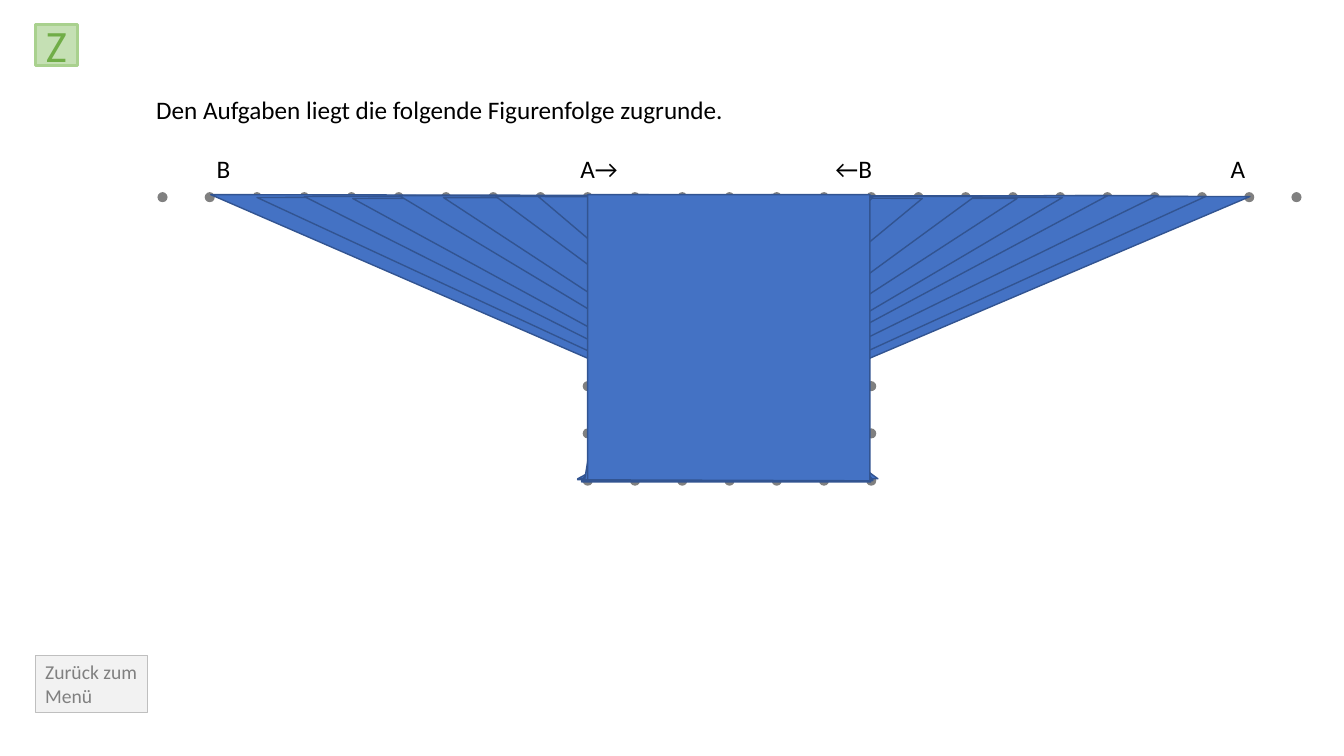
from dataclasses import dataclass
from pptx import Presentation
from pptx.dml.color import RGBColor
from pptx.enum.shapes import MSO_SHAPE
from pptx.enum.text import MSO_ANCHOR, PP_ALIGN
from pptx.util import Pt


@dataclass(frozen=True)
class Theme:
    font: str = "Calibri"
    text: str = "000000"
    dot: str = "808080"
    fill: str = "4472C4"
    edge: str = "325491"
    badge: str = "C5E0B4"
    rim: str = "A9D18E"
    letter: str = "70AD47"
    button: str = "F2F2F2"
    frame: str = "BFBFBF"
    muted: str = "808080"
    large: int = 32
    body: int = 18
    small: int = 14


THEME = Theme()
SIZE = (960, 540)
TITLE = ("Den Aufgaben liegt die folgende Figurenfolge zugrunde.", (104.4, 63.4, 779.8, 28.8))
BADGE = ("Z", (25.2, 17.2, 30.2, 29.5))
BUTTON = ("Zurück zum Menü", (25.2, 468, 80, 41))
LABELS = [
    ("A→", (407.5, 106.2, 70, 28.8)),
    ("←B", (589.7, 106.2, 70, 28.8)),
    ("A", (872, 106.2, 33, 28.8)),
    ("B", (147.6, 106.2, 33, 28.8)),
]
STEP, DOT = 33.75, 7.2
ORIGIN = (112.5, 137.25)
COLS, ROWS = 25, 7
LEFT, RIGHT = 9, 15
FIGURES = [
    [(150.5, 139), (621.4, 343.4), (415.4, 343.4), (892.8, 140.4)],
    [(183.6, 141.1), (622.1, 344.2), (415.4, 344.2), (861.1, 140.4)],
    [(217.4, 140.4), (619.2, 342.7), (412.6, 342.7), (826.6, 139.7)],
    [(252, 141.8), (619.2, 342), (412.6, 342), (791.3, 139.7)],
    [(285.1, 139.7), (623.5, 342.7), (416.9, 342.7), (758.9, 141.1)],
    [(316.8, 141.1), (623.5, 342), (417.6, 342), (726.5, 141.8)],
    [(354.2, 140.4), (627.1, 342), (420.5, 342), (696.2, 140.4)],
    [(384.5, 140.4), (622.1, 342), (416.2, 342), (658.8, 141.8)],
    [(421.2, 140.4), (622.8, 342), (416.9, 342), (623.5, 141.1)],
    [(452.2, 139), (619.9, 343.4), (416.2, 342.7), (587.5, 139.7)],
    [(486.7, 139), (623.5, 343.4), (420.5, 342.7), (555.1, 140.4)],
    [(521.3, 139.7), (419.8, 342.7), (622.1, 342.7)],
    [(419, 343.4), (486.7, 140.4), (553.7, 139), (621.4, 342)],
    [(451.4, 141.1), (586.8, 140.4), (620.6, 341.3), (417.6, 342.7)],
    [(419.8, 342.7), (621.4, 343.4), (621.4, 139), (419.8, 139)],
]


def paint(shape, fill, line=None, width=1):
    shape.shadow.inherit = False
    shape.fill.solid()
    shape.fill.fore_color.rgb = RGBColor.from_string(fill)
    if line:
        shape.line.color.rgb = RGBColor.from_string(line)
        shape.line.width = Pt(width)
    else:
        shape.line.fill.background()


def write(shape, text, size, color, align=PP_ALIGN.LEFT, anchor=MSO_ANCHOR.TOP):
    frame = shape.text_frame
    frame.text = text
    frame.word_wrap = True
    frame.vertical_anchor = anchor
    para = frame.paragraphs[0]
    para.alignment = align
    para.font.name = THEME.font
    para.font.size = Pt(size)
    para.font.color.rgb = RGBColor.from_string(color)


def draw_dots(shapes):
    for row in range(ROWS):
        for col in range(COLS):
            base = row == ROWS - 1 and LEFT <= col <= RIGHT
            if row == 0 or base or col in (LEFT, RIGHT):
                x, y = ORIGIN[0] + col * STEP, ORIGIN[1] + row * STEP
                dot = shapes.add_shape(MSO_SHAPE.OVAL, Pt(x), Pt(y), Pt(DOT), Pt(DOT))
                paint(dot, THEME.dot)


def draw_figures(shapes):
    for points in FIGURES:
        start, *rest = [(Pt(x), Pt(y)) for x, y in points]
        path = shapes.build_freeform(*start)
        path.add_line_segments(rest, close=True)
        paint(path.convert_to_shape(), THEME.fill, THEME.edge)


def add_box(shapes, box):
    return shapes.add_shape(MSO_SHAPE.RECTANGLE, *map(Pt, box))


def main():
    deck = Presentation()
    deck.slide_width, deck.slide_height = map(Pt, SIZE)
    shapes = deck.slides.add_slide(deck.slide_layouts[5]).shapes

    text, box = TITLE
    title = shapes.title
    title.left, title.top, title.width, title.height = map(Pt, box)
    write(title, text, THEME.body, THEME.text)

    draw_dots(shapes)

    text, box = BADGE
    badge = add_box(shapes, box)
    paint(badge, THEME.badge, THEME.rim, 2.25)
    write(badge, text, THEME.large, THEME.letter, PP_ALIGN.CENTER, MSO_ANCHOR.MIDDLE)

    text, box = BUTTON
    button = add_box(shapes, box)
    paint(button, THEME.button, THEME.frame, 0.75)
    write(button, text, THEME.small, THEME.muted)

    draw_figures(shapes)
    for text, box in LABELS:
        write(shapes.add_textbox(*map(Pt, box)), text, THEME.body, THEME.text)

    deck.save("out.pptx")


if __name__ == "__main__":
    main()
